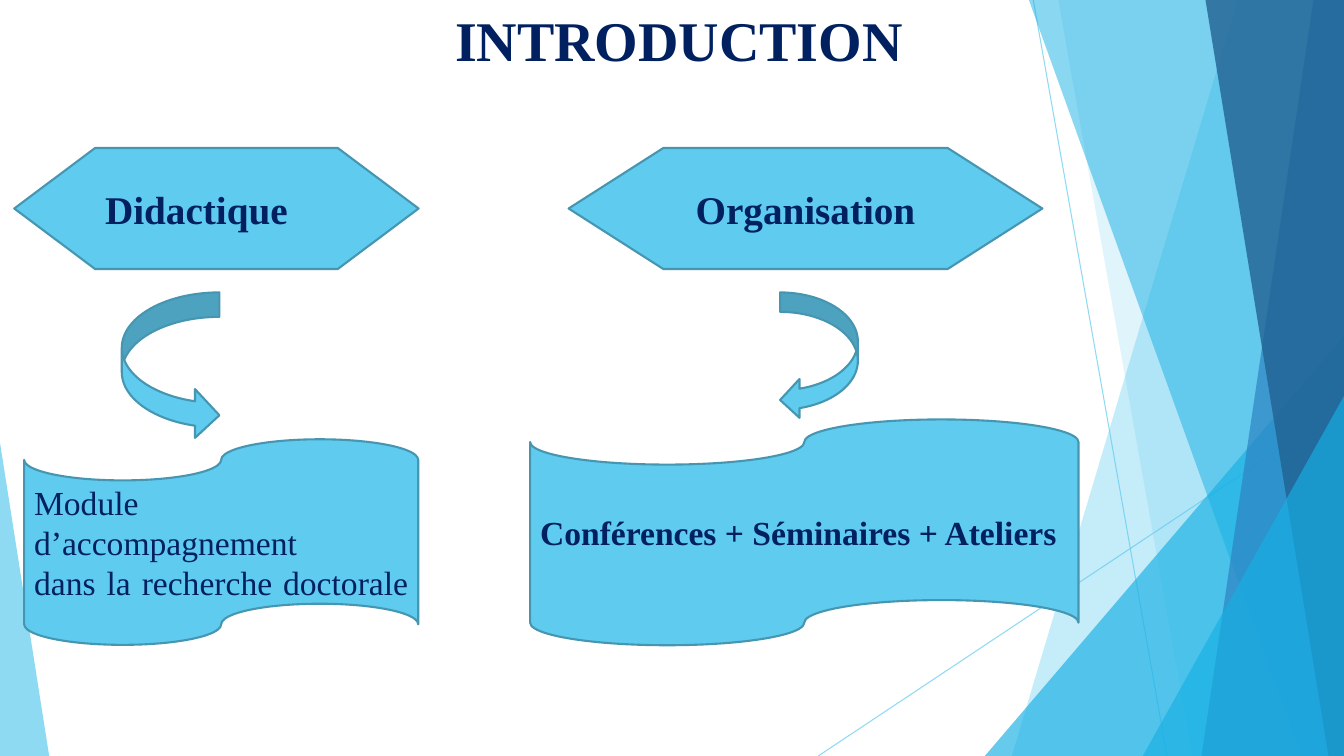
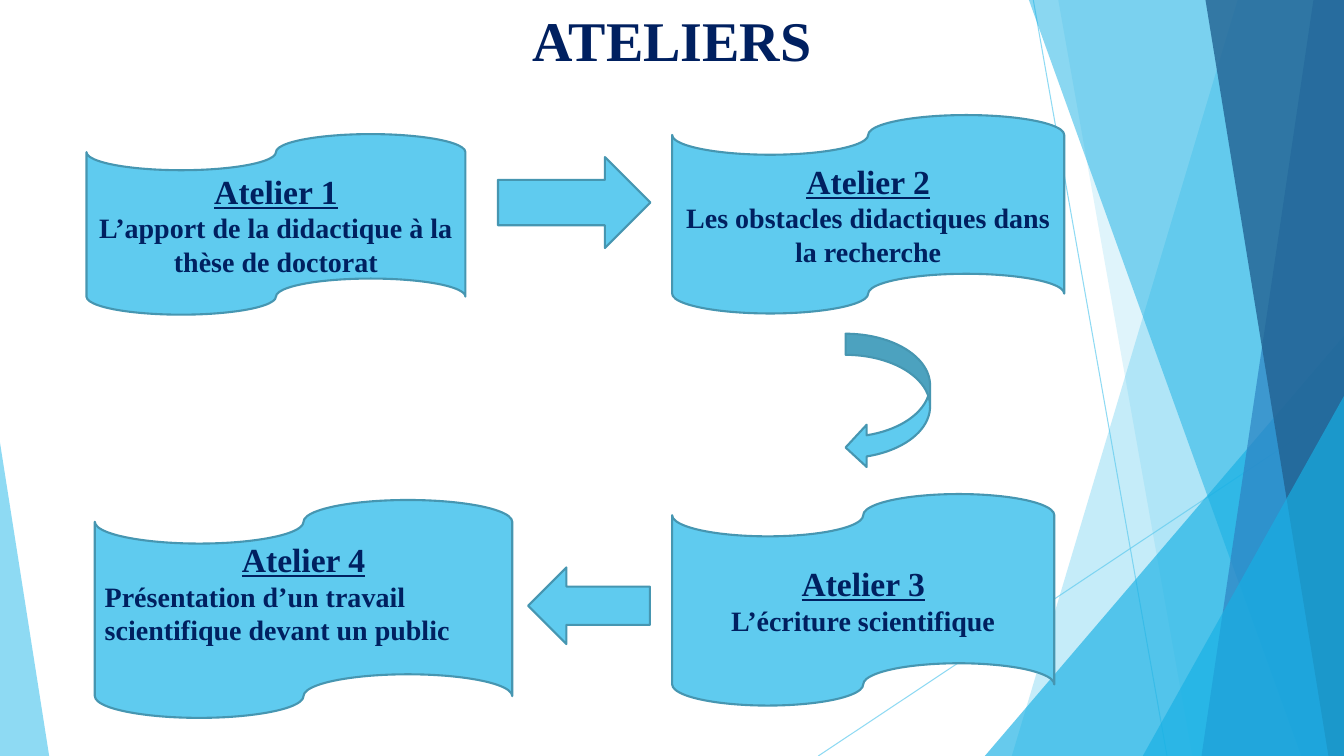
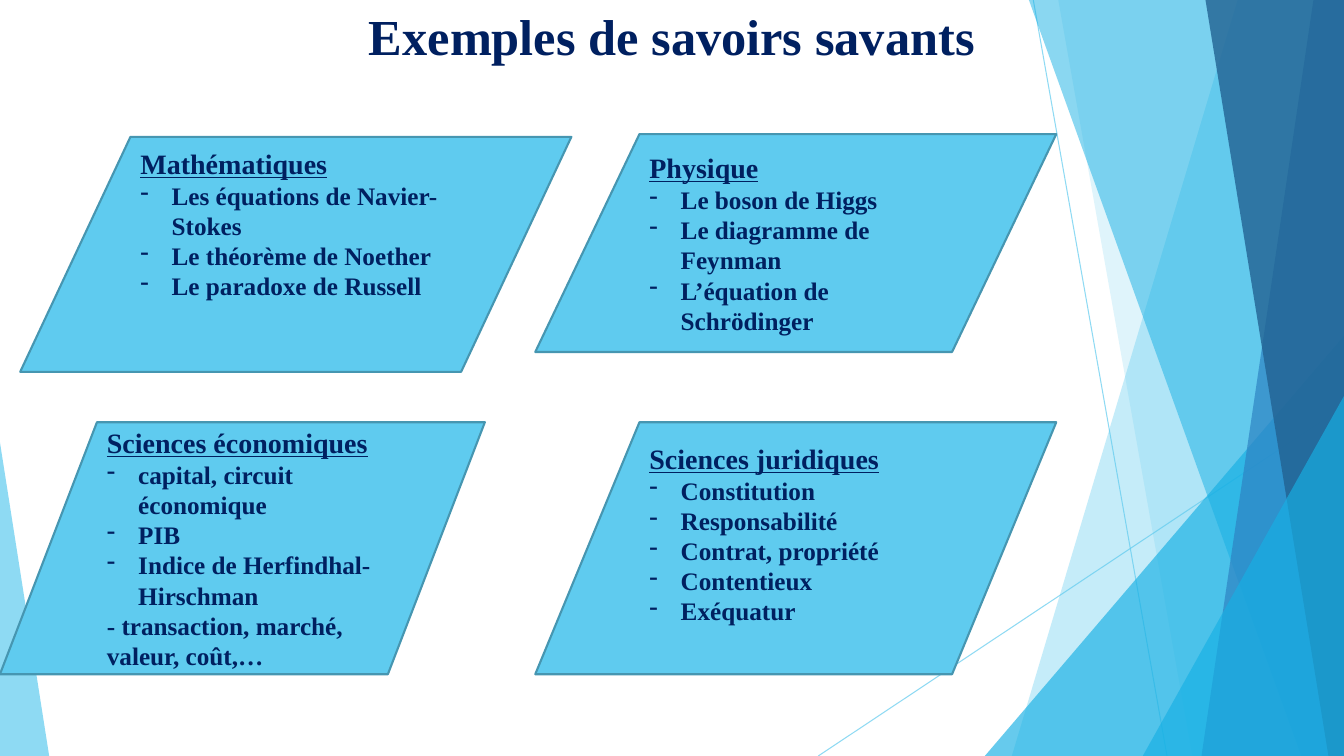
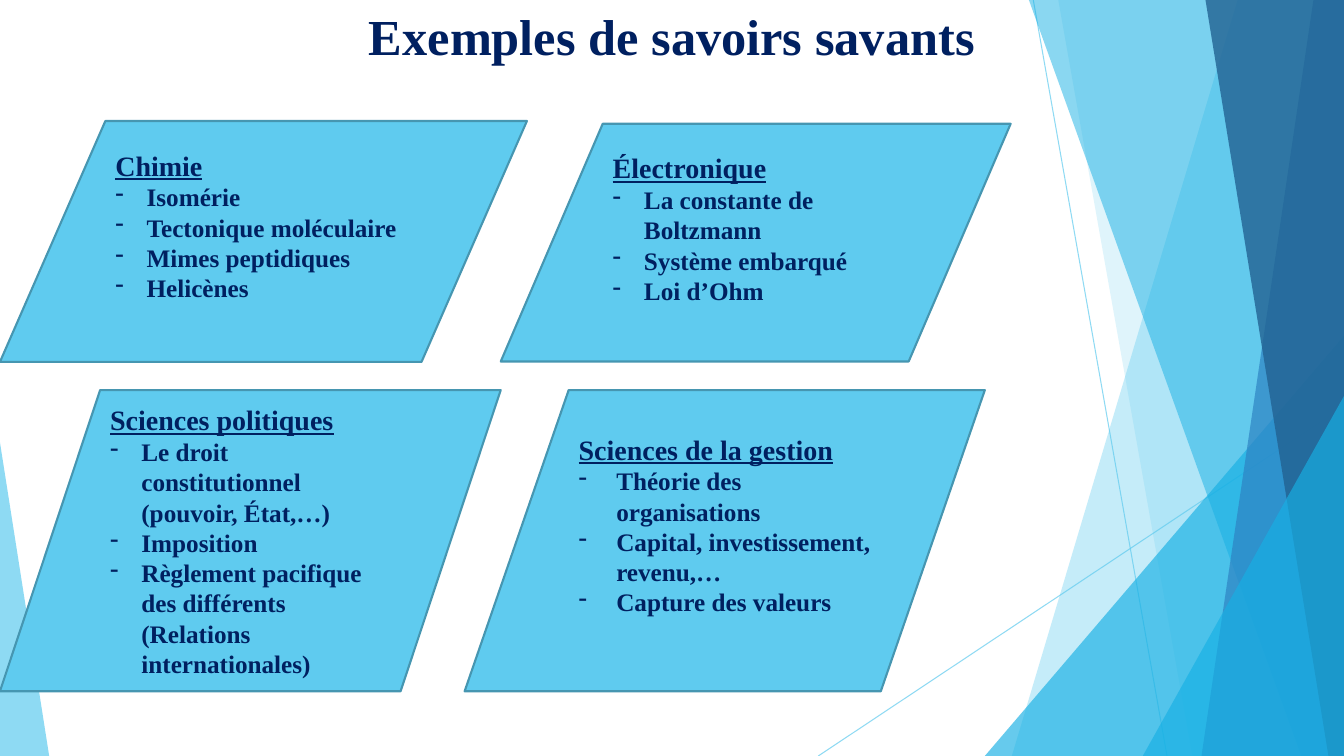
from lxml import etree
from pptx import Presentation
from pptx.dml.color import RGBColor
from pptx.enum.shapes import MSO_CONNECTOR, MSO_SHAPE
from pptx.enum.text import MSO_ANCHOR, MSO_AUTO_SIZE, PP_ALIGN
from pptx.oxml.ns import qn
from pptx.util import Cm, Pt

SKY = RGBColor(0x5F, 0xCB, 0xEF)
CYAN = RGBColor(0x17, 0xB0, 0xE4)
BLUE = RGBColor(0x2E, 0x83, 0xC3)
STEEL = RGBColor(0x22, 0x62, 0x92)
OUTLINE = RGBColor(0x46, 0x96, 0xB1)
NAVY = RGBColor(0x00, 0x20, 0x60)
FONT = "Times New Roman"
WIDTH, HEIGHT = 33.87, 19.05
INSET = 0.13


def write(shape, text, size, align=PP_ALIGN.LEFT, bold=True):
    shape.text_frame.text = text
    for paragraph in shape.text_frame.paragraphs:
        paragraph.alignment = align
        for run in paragraph.runs:
            run.font.name = FONT
            run.font.size = Pt(size)
            run.font.bold = bold
            run.font.color.rgb = NAVY


def add_panel(slide, kind, box):
    """Add a sky-blue outlined shape; box is left, top, width, height in cm."""
    panel = slide.shapes.add_shape(kind, *[Cm(length) for length in box])
    panel.shadow.inherit = False
    panel.fill.solid()
    panel.fill.fore_color.rgb = SKY
    panel.line.color.rgb = OUTLINE
    panel.line.width = Pt(1.5)
    panel.text_frame.word_wrap = True
    panel.text_frame.vertical_anchor = MSO_ANCHOR.MIDDLE
    return panel


prs = Presentation()
prs.slide_width, prs.slide_height = Cm(WIDTH), Cm(HEIGHT)
layout = prs.slide_layouts[5]

# Titles: text, size, placeholder height
titles = [
    (" INTRODUCTION", 40, 3.07),
    ("ATELIERS", 40, 2.46),
    ("Exemples de savoirs savants", 36, 2.51),
    ("Exemples de savoirs savants", 36, 2.39),
]
slides = []
for text, size, height in titles:
    slide = prs.slides.add_slide(layout)
    title = slide.shapes.title
    title.left, title.top = Cm(0), Cm(0)
    title.width, title.height = Cm(WIDTH), Cm(height)
    title.text_frame.vertical_anchor = MSO_ANCHOR.TOP
    title.text_frame.auto_size = MSO_AUTO_SIZE.NONE
    write(title, text, size, PP_ALIGN.CENTER)
    slides.append(slide)
introduction, workshops, sciences, more_sciences = slides

# Shared decoration: drawn once, then moved into the layout
decoration = []
for ends in [(26.04, 0, 29.41, HEIGHT), (WIDTH, 10.24, 20.62, HEIGHT)]:
    ray = introduction.shapes.add_connector(
        MSO_CONNECTOR.STRAIGHT, *[Cm(length) for length in ends])
    ray.line.color.rgb = SKY
    ray.line.width = Pt(0.75)
    etree.SubElement(ray.element.spPr, qn("a:effectLst"))
    decoration.append((ray, 70))

# Bands: x at the top, x at the bottom. Triangles: left, top, width, apex
facets = [
    ((31.19, 25.5), SKY, 36),
    ((26.67, 30.05), SKY, 20),
    ((24.82, 8.46, 9.05, 1), CYAN, 66),
    ((25.93, 32.79), CYAN, 50),
    ((33.1, 30.28), BLUE, 70),
    ((30.38, 33.48), STEEL, 80),
    ((28.8, 9.98, 5.07, 1), CYAN, 66),
    ((0, 11.15, 1.24, 0), SKY, 70),
]
for geometry, color, opacity in facets:
    if len(geometry) == 2:
        top_x, bottom_x = geometry
        outline = introduction.shapes.build_freeform(Cm(top_x), Cm(0))
        outline.add_line_segments([
            (Cm(WIDTH), Cm(0)), (Cm(WIDTH), Cm(HEIGHT)), (Cm(bottom_x), Cm(HEIGHT))])
        facet = outline.convert_to_shape()
    else:
        left, top, width, apex = geometry
        facet = introduction.shapes.add_shape(
            MSO_SHAPE.ISOSCELES_TRIANGLE,
            Cm(left), Cm(top), Cm(width), Cm(HEIGHT - top))
        facet.adjustments[0] = apex
    facet.shadow.inherit = False
    facet.fill.solid()
    facet.fill.fore_color.rgb = color
    facet.line.fill.background()
    decoration.append((facet, opacity))

for position, (part, opacity) in enumerate(decoration, start=2):
    color_element = part.element.find(".//" + qn("a:srgbClr"))
    etree.SubElement(color_element, qn("a:alpha"), val=str(opacity * 1000))
    layout.shapes.element.insert(position, part.element)

# Introduction
themes = [
    (MSO_SHAPE.FLOWCHART_PREPARATION, (0.36, 3.73, 10.19, 3.05),
     "Didactique", 28, PP_ALIGN.JUSTIFY, True),
    (MSO_SHAPE.FLOWCHART_PREPARATION, (14.33, 3.73, 11.94, 3.05),
     "Organisation", 28, PP_ALIGN.CENTER, True),
    (MSO_SHAPE.FLOWCHART_PUNCHED_TAPE, (0.61, 11.07, 9.93, 5.18),
     "Module d’accompagnement \ndans la recherche doctorale ", 24, PP_ALIGN.JUSTIFY, False),
    (MSO_SHAPE.FLOWCHART_PUNCHED_TAPE, (13.36, 10.57, 13.82, 5.69),
     "Conférences + Séminaires + Ateliers", 24, PP_ALIGN.JUSTIFY, True),
]
for kind, box, text, size, align, bold in themes:
    write(add_panel(introduction, kind, box), text, size, align, bold)

# Workshops: box, subject, alignment, extra space below the text
workshop_panels = [
    ((2.18, 3.38, 9.55, 4.55), "Atelier 1",
     "L’apport de la didactique à la thèse de doctorat", PP_ALIGN.CENTER, 0),
    ((16.94, 2.9, 9.88, 5), "Atelier 2",
     "Les obstacles didactiques dans la recherche", PP_ALIGN.CENTER, 0),
    ((2.39, 12.6, 10.52, 5.49), "Atelier 4",
     "Présentation d’un travail scientifique devant un public", PP_ALIGN.LEFT, 0.81),
    ((16.94, 12.45, 9.63, 5.33), "Atelier 3",
     "L’écriture scientifique", PP_ALIGN.CENTER, 0),
]
for box, heading, subject, align, space_below in workshop_panels:
    panel = add_panel(workshops, MSO_SHAPE.FLOWCHART_PUNCHED_TAPE, box)
    panel.text_frame.margin_bottom = Cm(INSET + space_below)
    write(panel, f"{heading}\n{subject}", 20, align)
    first = panel.text_frame.paragraphs[0]
    first.alignment = PP_ALIGN.CENTER
    first.runs[0].font.size = Pt(24)
    first.runs[0].font.underline = True

# Arrows between the panels
arrows = [
    (introduction, MSO_SHAPE.CURVED_RIGHT_ARROW, (3.07, 7.37, 2.46, 3.71)),
    (introduction, MSO_SHAPE.CURVED_LEFT_ARROW, (19.66, 7.37, 1.96, 3.2)),
    (workshops, MSO_SHAPE.CURVED_LEFT_ARROW, (21.31, 8.41, 2.13, 3.4)),
    (workshops, MSO_SHAPE.RIGHT_ARROW, (12.55, 3.96, 3.84, 2.29)),
    (workshops, MSO_SHAPE.LEFT_ARROW, (13.31, 14.3, 3.07, 1.93)),
]
for slide, kind, box in arrows:
    add_panel(slide, kind, box)

# Fields of knowledge: slide, box, space below, bullet indent, heading, examples
fields = [
    (sciences, (0.51, 3.45, 13.89, 5.92), 1.54, 0.79, "Mathématiques",
     ["Les équations de Navier-Stokes", "Le théorème de Noether",
      "Le paradoxe de Russell"]),
    (sciences, (13.49, 3.38, 13.13, 5.49), 0, 0.79, "Physique",
     ["Le boson de Higgs", "Le diagramme de Feynman", "L’équation de Schrödinger"]),
    (sciences, (0, 10.64, 12.22, 6.35), 0, 0.79, "Sciences économiques",
     ["capital, circuit économique", "PIB", "Indice de Herfindhal-Hirschman",
      "- transaction, marché, valeur, coût,…"]),
    (sciences, (13.49, 10.64, 13.13, 6.35), 0.73, 0.79, "Sciences juridiques",
     ["Constitution", "Responsabilité", "Contrat, propriété", "Contentieux",
      "Exéquatur"]),
    (more_sciences, (0, 3.05, 13.28, 6.07), 0.81, 0.79, "Chimie",
     ["Isomérie", "Tectonique moléculaire", "Mimes peptidiques", "Helicènes"]),
    (more_sciences, (12.62, 3.12, 12.85, 5.99), 0.73, 0.79, "Électronique",
     ["La constante de Boltzmann", "Système embarqué", "Loi d’Ohm"]),
    (more_sciences, (0, 9.83, 12.62, 7.59), 0, 0.79, "Sciences politiques",
     ["Le droit constitutionnel (pouvoir, État,…)", "Imposition",
      "Règlement pacifique des différents (Relations internationales)"]),
    (more_sciences, (11.71, 9.83, 13.11, 7.59), 0.81, 0.95, "Sciences de la gestion",
     ["Théorie des organisations", "Capital, investissement, revenu,…",
      "Capture des valeurs"]),
]
for slide, box, space_below, indent, heading, examples in fields:
    panel = add_panel(slide, MSO_SHAPE.FLOWCHART_DATA, box)
    panel.text_frame.margin_bottom = Cm(INSET + space_below)
    write(panel, "\n".join([heading, *examples]), 18)
    first, *rest = panel.text_frame.paragraphs
    first.runs[0].font.size = Pt(20)
    first.runs[0].font.underline = True
    for paragraph in rest:
        if paragraph.text.startswith("-"):
            continue
        properties = paragraph._p.get_or_add_pPr()
        properties.set("marL", str(Cm(indent)))
        properties.set("indent", str(-Cm(indent)))
        etree.SubElement(properties, qn("a:buChar"), char="-")

prs.save("out.pptx")
